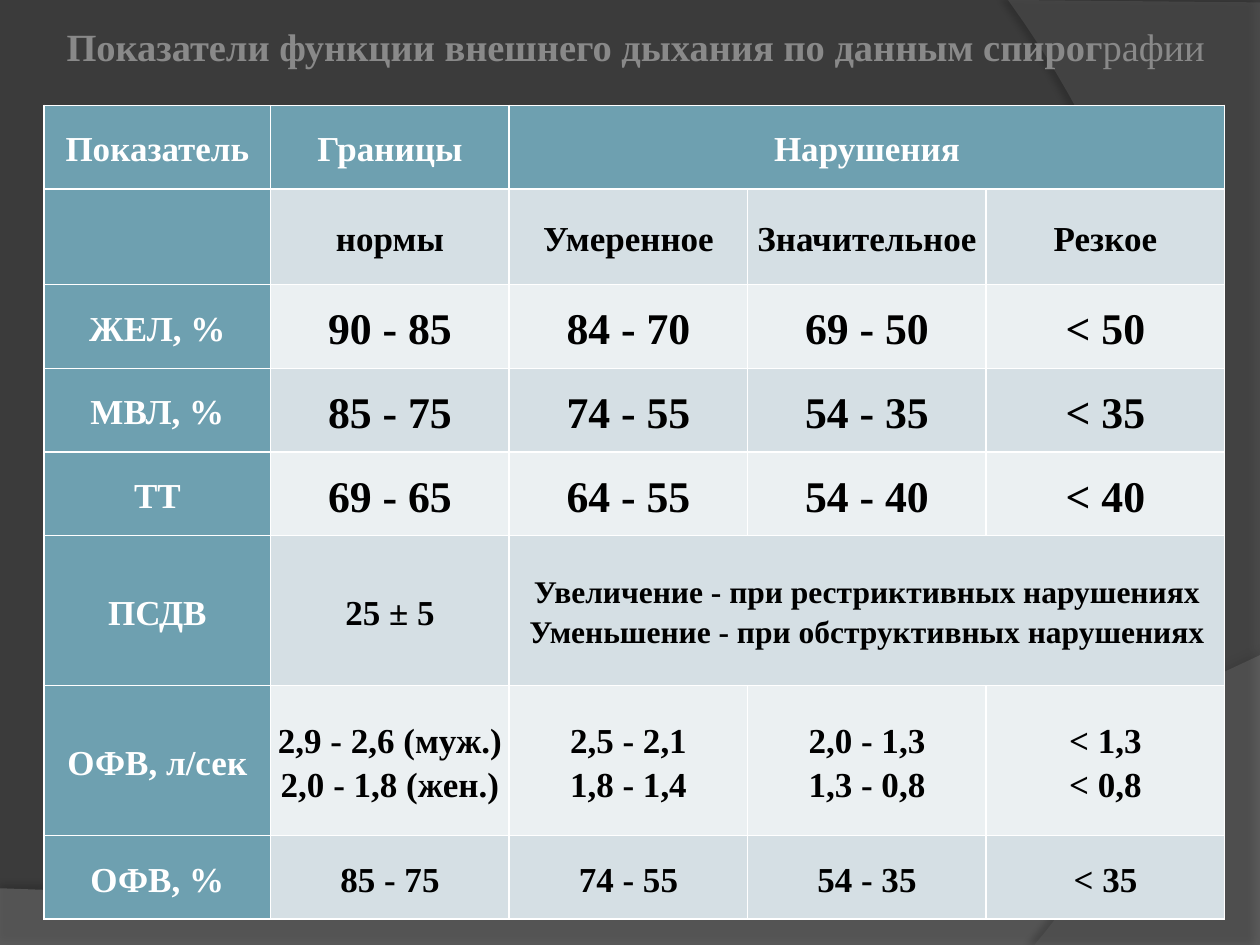
from lxml import etree
from pptx import Presentation
from pptx.dml.color import RGBColor
from pptx.enum.text import MSO_ANCHOR, MSO_AUTO_SIZE, PP_ALIGN
from pptx.oxml.ns import qn
from pptx.util import Pt

CENTER, MIDDLE = PP_ALIGN.CENTER, MSO_ANCHOR.MIDDLE

THEME = {
    "font": "Times New Roman",
    "background": "3B3B3B", "wave": "7F7F7F", "arc": "5E5E5E",
    "title": "898989", "head": "6EA0B0", "head_text": "FFFFFF",
    "bands": ("EBF0F2", "D5DFE4"), "body_text": "000000", "shadow": "000000",
    "title_size": 22, "text_size": 20, "large_size": 25, "note_size": 18,
}

TITLE = [("Показатели функции внешнего дыхания по данным спирог", True),
         ("рафии", False)]

# Each row: height, type size of the values, texts (the last one fills the row)
ROWS = [
    (47.8, "text_size", ["Показатель", "Границы", "Нарушения"]),
    (54.7, "text_size", ["", "нормы", "Умеренное", "Значительное", "Резкое"]),
    (47.8, "large_size", ["ЖЕЛ, %", "90 - 85", "84 - 70", "69 - 50", "< 50"]),
    (47.8, "large_size", ["МВЛ, %", "85 - 75", "74 - 55", "54 - 35", "< 35"]),
    (47.8, "large_size", ["ТТ", "69 - 65", "64 - 55", "54 - 40", "< 40"]),
    (85.7, "text_size", ["ПСДВ", "25 ± 5",
                         "Увеличение - при рестриктивных нарушениях\n"
                         "Уменьшение - при обструктивных нарушениях"]),
    (85.7, "text_size", ["ОФВ, л/сек", "2,9 - 2,6 (муж.)\n2,0 - 1,8 (жен.)",
                         "2,5 - 2,1\n1,8 - 1,4", "2,0 - 1,3\n1,3 - 0,8",
                         "< 1,3\n< 0,8"]),
    (47.8, "text_size", ["ОФВ, %", "85 - 75", "74 - 55", "54 - 35", "< 35"]),
]
COLUMNS = [129.5] + [136.3] * 4
TABLE_LEFT, TABLE_TOP = 25.2, 60.2

# Each decoration: colour, opacity, straight points, curve, shadow (opacity, distance, angle)
DECORATIONS = [
    ("wave", 45, [(0, 540), (720, 540)],
     [(720, 374.4), (402.5, 524.9), (281.5, 517.7), (0, 507.6)], (35, 3.5, 270)),
    ("arc", 40, [(720, 1.4), (720, 540)],
     [(591.1, 540), (673.2, 445.7), (733, 216), (576, 0)], (45, 4, 180)),
]


def rgb(name):
    return RGBColor.from_string(THEME.get(name, name))


def bezier(curve, steps=48):
    """Return points along a cubic curve given by its four control points."""
    points = []
    for i in range(steps + 1):
        t = i / steps
        weights = ((1 - t) ** 3, 3 * t * (1 - t) ** 2, 3 * t * t * (1 - t), t ** 3)
        points.append(tuple(sum(w * c[axis] for w, c in zip(weights, curve))
                            for axis in (0, 1)))
    return points


def add_alpha(color, percent):
    etree.SubElement(color, qn("a:alpha"), val=str(percent * 1000))


def add_decoration(slide, color, opacity, straight, curve, shadow):
    points = [(Pt(x), Pt(y)) for x, y in straight + bezier(curve)]
    builder = slide.shapes.build_freeform(*points[0])
    builder.add_line_segments(points[1:], close=True)
    s = builder.convert_to_shape()
    s.fill.solid()
    s.fill.fore_color.rgb = rgb(color)
    s.line.fill.background()
    s.shadow.inherit = False
    pr = s.element.spPr
    add_alpha(pr.find(qn("a:solidFill"))[0], opacity)
    strength, distance, angle = shadow
    outer = etree.SubElement(pr.find(qn("a:effectLst")), qn("a:outerShdw"),
                             blurRad=str(Pt(4)), dist=str(Pt(distance)),
                             dir=str(angle * 60000), algn="ctr", rotWithShape="0")
    add_alpha(etree.SubElement(outer, qn("a:srgbClr"), val=THEME["shadow"]), strength)


def add_run(p, text, size, color, bold=True):
    r = p.add_run()
    r.text = text
    r.font.name, r.font.size, r.font.bold = THEME["font"], Pt(THEME[size]), bold
    r.font.color.rgb = rgb(color)


def add_title(slide):
    tf = slide.shapes.add_textbox(Pt(14.4), Pt(9.4), Pt(697.7), Pt(33.8)).text_frame
    tf.word_wrap = True
    tf.auto_size = MSO_AUTO_SIZE.SHAPE_TO_FIT_TEXT
    p = tf.paragraphs[0]
    p.alignment = CENTER
    for text, bold in TITLE:
        add_run(p, text, "title_size", "title", bold)


def fill_cell(cell, text, size, color, fill, space_after):
    cell.fill.solid()
    cell.fill.fore_color.rgb = rgb(fill)
    if not text:
        return
    cell.vertical_anchor = MIDDLE
    cell.margin_left = cell.margin_right = Pt(2)
    cell.margin_top = cell.margin_bottom = Pt(2)
    p = cell.text_frame.paragraphs[0]
    p.alignment, p.line_spacing, p.space_after = CENTER, 1.15, Pt(space_after)
    for i, line in enumerate(text.split("\n")):
        if i:
            p.add_line_break()
        add_run(p, line, size, color)


def add_indicator_table(slide):
    heights = [height for height, _, _ in ROWS]
    table = slide.shapes.add_table(
        len(ROWS), len(COLUMNS), Pt(TABLE_LEFT), Pt(TABLE_TOP),
        Pt(sum(COLUMNS)), Pt(sum(heights))).table
    table.first_col = True
    for column, width in zip(table.columns, COLUMNS):
        column.width = Pt(width)
    for i, (height, value_size, texts) in enumerate(ROWS):
        table.rows[i].height = Pt(height)
        last = len(texts) - 1
        merged = len(texts) < len(COLUMNS)
        if merged:
            table.cell(i, last).merge(table.cell(i, len(COLUMNS) - 1))
        for j, text in enumerate(texts):
            is_head = i == 0 or j == 0
            size = "text_size" if is_head else value_size
            if merged and j == last and not is_head:
                size = "note_size"
            fill_cell(table.cell(i, j), text, size,
                      "head_text" if is_head else "body_text",
                      "head" if is_head else THEME["bands"][i % 2],
                      0 if j == 0 and i > 0 else 10)


def main():
    prs = Presentation()
    prs.slide_width, prs.slide_height = Pt(720), Pt(540)
    slide = prs.slides.add_slide(prs.slide_layouts[6])
    slide.background.fill.solid()
    slide.background.fill.fore_color.rgb = rgb("background")
    for decoration in DECORATIONS:
        add_decoration(slide, *decoration)
    add_title(slide)
    add_indicator_table(slide)
    prs.save("out.pptx")


if __name__ == "__main__":
    main()
